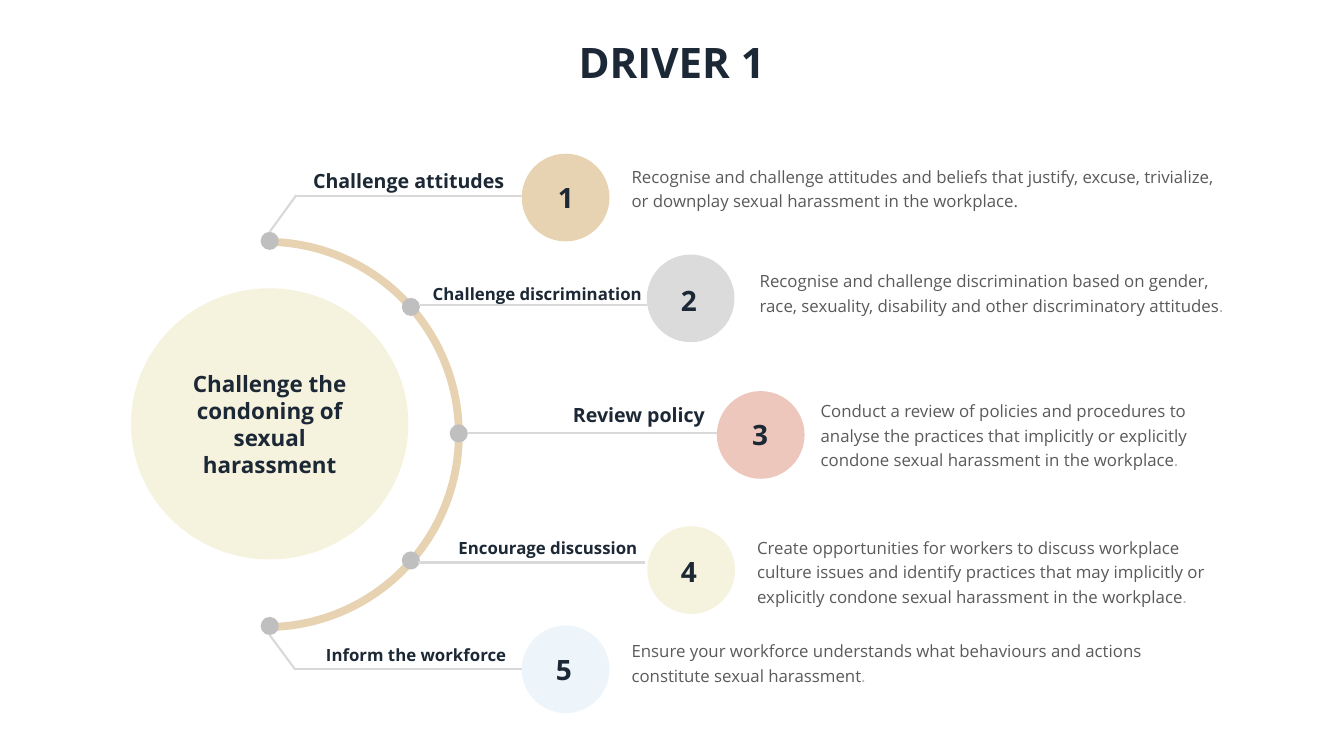
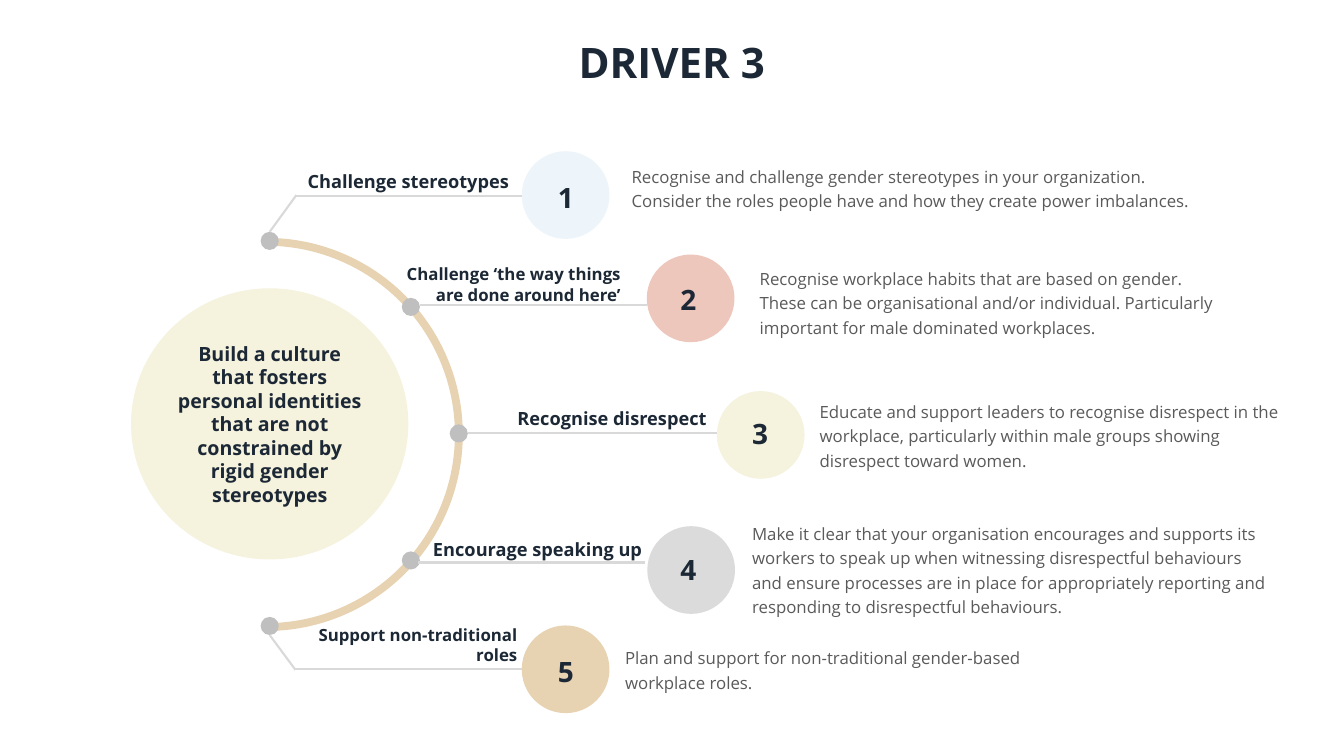
from pptx import Presentation
from pptx.dml.color import RGBColor
from pptx.enum.shapes import MSO_CONNECTOR, MSO_SHAPE
from pptx.enum.text import MSO_ANCHOR, MSO_AUTO_SIZE, PP_ALIGN
from pptx.oxml.ns import qn
from pptx.util import Cm, Pt
from lxml.etree import SubElement

# Shared look
INK, TEXT, FADE = "1C2835", "5A5A5A", "B3B3B3"
SAND, GREY, PINK, CREAM, BLUE = "E7D2B2", "DBDBDB", "EDC6BC", "F5F2DE", "EDF5FA"
KNOT, RULE = "BFBFBF", "D9D9D9"
BOLD = {"name": "Open Sans", "bold": True}
BODY = {"name": "Open Sans", "size": Pt(24), "bold": False}
DOT = {"name": "Lato", "size": Pt(24), "bold": False}

# Shared geometry, in inches
KNOTS = [(5.17, 4.6), (7.97, 5.91), (8.92, 8.42), (7.97, 10.94), (5.17, 12.24)]
BALLS = [(10.35, 3.05), (12.83, 5.05), (14.22, 7.76), (12.84, 10.44), (10.35, 12.41)]
LINES = [
    (14.22, 8.6, 9.28, 8.6),
    (12.83, 6.06, 8.33, 6.06),
    (10.35, 3.89, 5.85, 3.89),
    (5.88, 3.87, 5.35, 4.6),
    (12.8, 11.16, 8.3, 11.16),
    (10.35, 13.27, 5.85, 13.27),
    (5.86, 13.29, 5.35, 12.6),
]

# Steps: fill, number spot, label (box, size, wrap, text), detail (left, top, width, rows, text)
FIRST = {
    "title": "DRIVER 1",
    "theme": ("Challenge the condoning of sexual harassment", 32),
    "lift": 0,
    "steps": [
        (SAND, (10.97, 3.54),
         ((5.91, 3.3, 4.29, 0.57), 28, False, "Challenge attitudes "),
         (12.43, 3.17, 11.92, 2, "Recognise and challenge attitudes and beliefs that justify, "
          "excuse, trivialize, or downplay sexual harassment in the workplace."), False),
        (GREY, (13.41, 5.57),
         ((8.44, 5.58, 4.39, 0.5), 24, False, "Challenge discrimination"),
         (14.97, 5.24, 9.65, 2, "Recognise and challenge discrimination based on gender, race, "
          "sexuality, disability and other discriminatory attitudes"), True),
        (PINK, (14.82, 8.24),
         ((11.24, 7.95, 2.84, 0.57), 28, False, "Review policy"),
         (16.18, 7.82, 8.44, 3, "Conduct a review of policies and procedures to analyse the "
          "practices that implicitly or explicitly condone sexual harassment in the workplace"),
         True),
        (CREAM, (13.41, 10.95),
         ((8.96, 10.61, 3.78, 0.5), 24, False, "Encourage discussion"),
         (14.92, 10.53, 9.38, 3, "Create opportunities for workers to discuss workplace culture "
          "issues and identify practices that may implicitly or explicitly condone sexual "
          "harassment in the workplace"), True),
        (BLUE, (10.93, 12.9),
         ((6.33, 12.74, 3.81, 0.5), 24, False, "Inform the workforce"),
         (12.43, 12.58, 10.79, 2, "Ensure your workforce understands what behaviours and actions "
          "constitute sexual harassment"), True),
    ],
}
THIRD = {
    "title": "DRIVER 3",
    "theme": ("Build a culture that fosters personal identities that are not constrained "
              "by rigid gender stereotypes", 28),
    "lift": 0.05,
    "steps": [
        (BLUE, (10.97, 3.54),
         ((5.96, 3.33, 4.24, 0.54), 26, False, "Challenge stereotypes"),
         (12.43, 3.17, 11.77, 2, "Recognise and challenge gender stereotypes in your "
          "organization. Consider the roles people have and how they create power "
          "imbalances."), False),
        (PINK, (13.4, 5.55),
         ((7.91, 5.11, 4.5, 0.98), 24, True, "Challenge ‘the way things are done around here’"),
         (14.97, 5.19, 9.45, 3, "Recognise workplace habits that are based on gender. These can "
          "be organisational and/or individual. Particularly important for male dominated "
          "workplaces."), False),
        (CREAM, (14.82, 8.21),
         ((10.13, 8.03, 3.99, 0.54), 26, False, "Recognise disrespect"),
         (16.16, 7.83, 9.45, 3, "Educate and support leaders to recognise disrespect in the "
          "workplace, particularly within male groups showing disrespect toward women."), False),
        (GREY, (13.4, 10.92),
         ((8.45, 10.62, 4.39, 0.54), 26, False, "Encourage speaking up"),
         (14.82, 10.25, 10.45, 4, "Make it clear that your organisation encourages and supports "
          "its workers to speak up when witnessing disrespectful behaviours and ensure "
          "processes are in place for appropriately reporting and responding to disrespectful "
          "behaviours."), False),
        (SAND, (10.97, 12.94),
         ((5.85, 12.33, 4.51, 0.91), 24, True, "Support non-traditional roles"),
         (12.3, 12.72, 9.45, 2, "Plan and support for non-traditional gender-based workplace "
          "roles."), False),
    ],
}


def scale(*vals):
    return [Cm(val * 2.54) for val in vals]


def paint(hue):
    return RGBColor.from_string(hue)


def apply(item, look):
    for key, val in look.items():
        setattr(item, key, val)


def add_run(para, text, hue, look):
    run = para.add_run()
    run.text = text
    apply(run.font, look)
    run.font.color.rgb = paint(hue)


# Kinds of element
def add_form(slide, kind, box, hue):
    form = slide.shapes.add_shape(kind, *scale(*box))
    form.shadow.inherit = False
    form.fill.solid()
    form.fill.fore_color.rgb = paint(hue)
    form.line.fill.background()
    return form


def add_line(slide, ends):
    line = slide.shapes.add_connector(MSO_CONNECTOR.STRAIGHT, *scale(*ends))
    line.line.color.rgb = paint(RULE)
    line.line.width = Pt(3)
    SubElement(line._element.spPr, qn("a:effectLst"))


def add_text(slide, box, runs, frame=None, para=None):
    body = slide.shapes.add_textbox(*scale(*box)).text_frame
    apply(body, {"word_wrap": False, "auto_size": MSO_AUTO_SIZE.SHAPE_TO_FIT_TEXT,
                 **(frame or {})})
    first = body.paragraphs[0]
    apply(first, para or {})
    for run in runs:
        add_run(first, *run)


def add_arc(slide):
    arc = add_form(slide, MSO_SHAPE.BLOCK_ARC, (1.38, 4.72, 7.8, 7.8), SAND)
    arc.rotation = 90
    for pos, val in enumerate((108, 0, 0.02)):
        arc.adjustments[pos] = val
    for left, top in KNOTS:
        add_form(slide, MSO_SHAPE.OVAL, (left, top, 0.36, 0.36), KNOT)


def add_theme(slide, text, size):
    disc = add_form(slide, MSO_SHAPE.OVAL, (2.6, 5.72, 5.5, 5.38), CREAM)
    body = disc.text_frame
    apply(body, {"word_wrap": True, "vertical_anchor": MSO_ANCHOR.MIDDLE})
    para = body.paragraphs[0]
    para.alignment = PP_ALIGN.CENTER
    add_run(para, text, INK, {**BOLD, "size": Pt(size)})


def add_label(slide, box, size, wrap, text):
    add_text(slide, box, [(text, INK, {**BOLD, "size": Pt(size)})],
             {"word_wrap": wrap, "vertical_anchor": MSO_ANCHOR.BOTTOM},
             {"alignment": PP_ALIGN.RIGHT})


def add_detail(slide, left, top, width, rows, text, faded):
    runs = [(text, TEXT, BODY)] + ([(".", FADE, DOT)] if faded else [])
    add_text(slide, (left, top, width, 0.07 + 0.49 * rows), runs, {"word_wrap": True},
             {"line_spacing": Pt(35), "space_before": Pt(4.8)})


def add_driver(deck, page):
    slide = deck.slides.add_slide(deck.slide_layouts[6])
    add_arc(slide)
    for pos, (ball, step) in enumerate(zip(BALLS, page["steps"])):
        top = ball[1] - (page["lift"] if pos == 0 else 0)
        add_form(slide, MSO_SHAPE.OVAL, (ball[0], top, 1.74, 1.74), step[0])
    for ends in LINES:
        add_line(slide, ends)
    add_text(slide, (11.36, 0.67, 3.93, 1.11),
             [(page["title"], INK, {**BOLD, "size": Pt(60)})],
             para={"alignment": PP_ALIGN.CENTER})
    add_theme(slide, *page["theme"])
    for count, (_, spot, label, detail, faded) in enumerate(page["steps"], 1):
        add_label(slide, *label)
        add_detail(slide, *detail, faded)
        add_text(slide, (*spot, 0.52, 0.77),
                 [(str(count), INK, {**BOLD, "size": Pt(40)})])


def main():
    deck = Presentation()
    deck.slide_width, deck.slide_height = scale(26.66, 15)
    for page in (FIRST, THIRD):
        add_driver(deck, page)
    deck.save("out.pptx")


if __name__ == "__main__":
    main()
